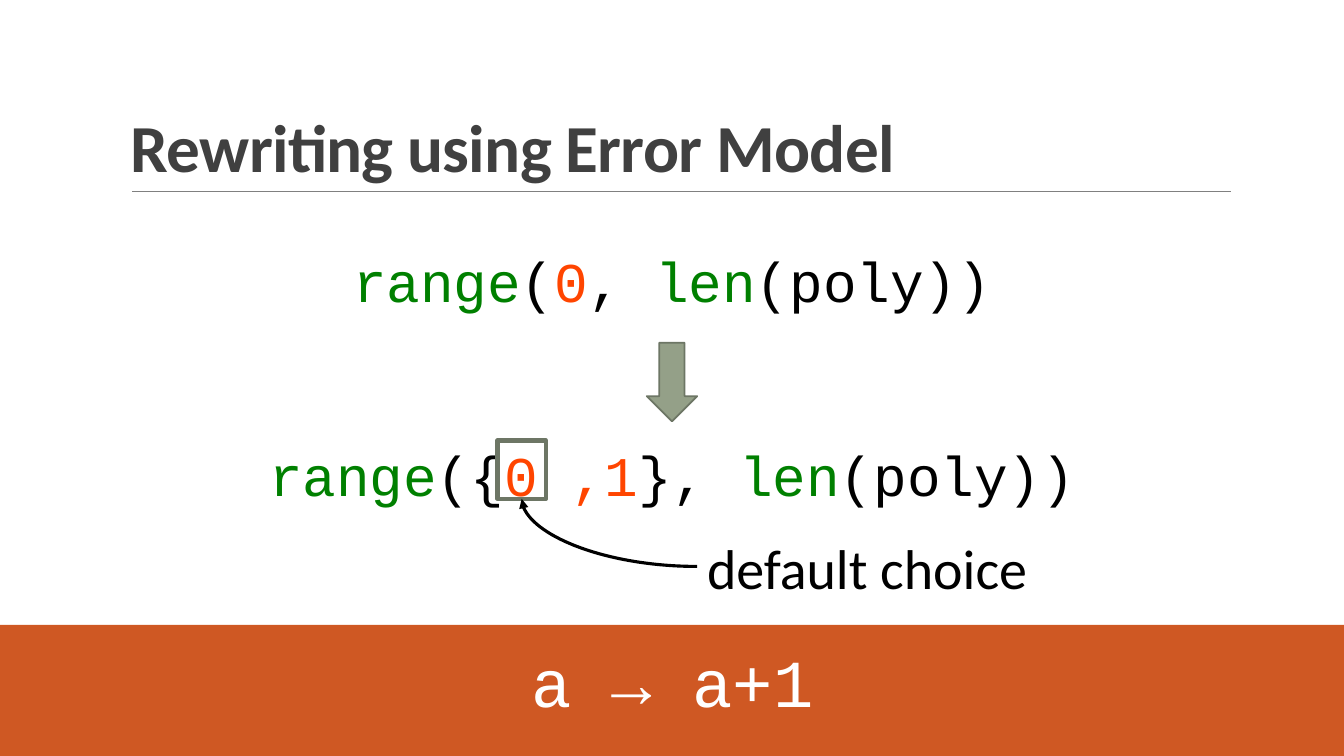
from lxml import etree
from pptx import Presentation
from pptx.dml.color import RGBColor
from pptx.enum.shapes import MSO_CONNECTOR, MSO_SHAPE
from pptx.enum.text import MSO_ANCHOR, PP_ALIGN
from pptx.oxml.ns import qn
from pptx.util import Inches, Pt

RECT, DOWN_ARROW = MSO_SHAPE.RECTANGLE, MSO_SHAPE.DOWN_ARROW
STRAIGHT, CURVE = MSO_CONNECTOR.STRAIGHT, MSO_CONNECTOR.CURVE
TOP, MIDDLE, BOTTOM = MSO_ANCHOR.TOP, MSO_ANCHOR.MIDDLE, MSO_ANCHOR.BOTTOM
LEFT, CENTER = PP_ALIGN.LEFT, PP_ALIGN.CENTER

SLIDE_W, SLIDE_H = 13.33, 7.5
SANS, MONO = "Calibri", "Courier New"
BLACK, WHITE, DARK_GRAY, GRAY = "000000", "FFFFFF", "404040", "808080"
GREEN, ORANGE, RUST = "008000", "FF4500", "CF5823"
SAGE, DARK_SAGE = "94A088", "6D7665"


def rgb(color):
    return RGBColor.from_string(color)


def add_text(slide, box, runs, size, font, anchor=MIDDLE, align=CENTER, bold=False):
    """Add one paragraph made of (text, colour) runs and return it."""
    tf = slide.shapes.add_textbox(*map(Inches, box)).text_frame
    for name, value in {"word_wrap": True, "vertical_anchor": anchor}.items():
        setattr(tf, name, value)
    p = tf.paragraphs[0]
    p.alignment = align
    for text, color in runs:
        r = p.add_run()
        r.text = text
        for name, value in {"size": Pt(size), "name": font, "bold": bold}.items():
            setattr(r.font, name, value)
        r.font.color.rgb = rgb(color)
    return p


def add_box(slide, kind, box, fill=None, line=None, width=0):
    sp = slide.shapes.add_shape(kind, *map(Inches, box))
    sp.shadow.inherit = False
    if fill:
        sp.fill.solid()
        sp.fill.fore_color.rgb = rgb(fill)
    else:
        sp.fill.background()
    if line:
        sp.line.color.rgb = rgb(line)
        sp.line.width = Pt(width)
    else:
        sp.line.fill.background()


def add_line(slide, kind, start, end, color, width):
    line = slide.shapes.add_connector(kind, *map(Inches, start + end))
    line.line.color.rgb = rgb(color)
    line.line.width = Pt(width)
    etree.SubElement(line._element.spPr, qn("a:effectLst"))
    return line


def title_region(slide, box, title):
    left, top, width, height = box
    p = add_text(slide, box, [(title, DARK_GRAY)], 48, SANS, BOTTOM, LEFT, True)
    p.line_spacing = 0.85
    p.runs[0].font._element.set("spc", "-50")
    rule_y = top + height
    add_line(slide, STRAIGHT, (left + 0.11, rule_y), (left + width + 0.01, rule_y),
             GRAY, 0.5)


def rewrite_region(slide, box):
    """Show the code before and after the rewrite, and the default choice."""
    left, top, width, _ = box
    middle = left + width / 2
    call = [("len", GREEN), ("(poly))", BLACK)]
    before = [("range", GREEN), ("(", BLACK), ("0", ORANGE), (", ", BLACK)]
    after = [("range", GREEN), ("({", BLACK), ("0 ,1", ORANGE), ("}, ", BLACK)]
    for i, start in enumerate((before, after)):
        add_text(slide, (left, top + i * 1.92, width, 0.8), start + call, 40, MONO)
    add_box(slide, DOWN_ARROW, (middle - 0.25, top + 1.02, 0.5, 0.78),
            SAGE, DARK_SAGE, 1.25)

    mark_x, mark_y, mark_w, mark_h = middle - 1.73, top + 1.99, 0.48, 0.58
    add_box(slide, RECT, (mark_x, mark_y, mark_w, mark_h), line=DARK_SAGE, width=3)
    label_x, label_y = middle + 0.25, top + 2.86
    add_text(slide, (label_x, label_y, 4.06, 0.77), [("default choice", BLACK)],
             40, SANS, TOP, LEFT)
    pointer = add_line(slide, CURVE, (label_x, label_y + 0.38),
                       (mark_x + mark_w / 2, mark_y + mark_h), BLACK, 2.25)
    pointer._element.spPr.find(qn("a:prstGeom")).set("prst", "curvedConnector2")
    ln = pointer.line._get_or_add_ln()
    etree.SubElement(ln, qn("a:tailEnd"), type="triangle")


def rule_band(slide, box, rule):
    left, top, width, _ = box
    add_box(slide, RECT, box, RUST)
    add_text(slide, (left + 1.14, top + 0.1, width - 2.27, 0.9), [(rule, WHITE)],
             48, MONO)


def main():
    prs = Presentation()
    prs.slide_width, prs.slide_height = Inches(SLIDE_W), Inches(SLIDE_H)
    slide = prs.slides.add_slide(prs.slide_layouts[6])
    title_region(slide, (1.2, 0.31, 11, 1.59), "Rewriting using Error Model")
    rewrite_region(slide, (1.97, 2.38, SLIDE_W - 2 * 1.97, 3.63))
    rule_band(slide, (0, 6.2, SLIDE_W, SLIDE_H - 6.2), "a → a+1")
    prs.save("out.pptx")


if __name__ == "__main__":
    main()
